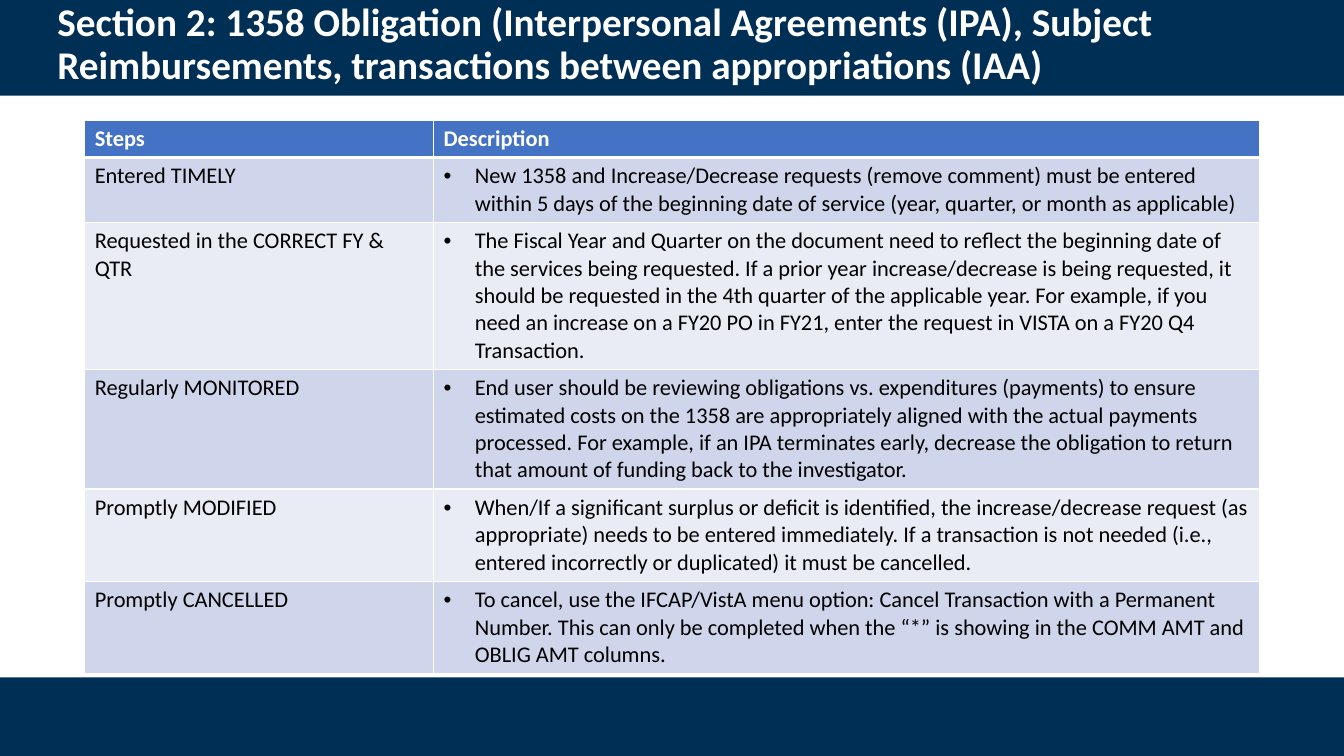
import dataclasses

import lxml.etree
import pptx
import pptx.dml.color
import pptx.enum.shapes
import pptx.enum.text
import pptx.oxml.ns
import pptx.util

PX = 9144  # EMU per px, 100 px to the inch
WIDE, HIGH = 1333, 750
FONT = "Calibri"
NAVY, BLUE, WHITE, BLACK = "002F56", "4472C4", "FFFFFF", "000000"
TINTS = ("CFD5EA", "E9EBF5")
LINE, PAD, INDENT = 27, 10, 31  # row text line, row padding, bullet indent
COLS = (346, 819)


@dataclasses.dataclass
class Band:
    top: int
    high: int


@dataclasses.dataclass
class Step:
    name: str
    text: str
    lines: int


BANDS = (Band(0, 95), Band(672, 78))
TITLE = ("Section 2: 1358 Obligation (Interpersonal Agreements (IPA), Subject "
         "Reimbursements, transactions between appropriations (IAA)")
HEAD = Step("Steps", "Description", 1)
STEPS = (
    Step("Entered TIMELY",
         "New 1358 and Increase/Decrease requests (remove comment) must be "
         "entered within 5 days of the beginning date of service (year, "
         "quarter, or month as applicable)", 2),
    Step("Requested in the CORRECT FY & QTR",
         "The Fiscal Year and Quarter on the document need to reflect the "
         "beginning date of the services being requested. If a prior year "
         "increase/decrease is being requested, it should be requested in "
         "the 4th quarter of the applicable year. For example, if you need "
         "an increase on a FY20 PO in FY21, enter the request in VISTA on a "
         "FY20 Q4 Transaction.", 5),
    Step("Regularly MONITORED",
         "End user should be reviewing obligations vs. expenditures "
         "(payments) to ensure estimated costs on the 1358 are appropriately "
         "aligned with the actual payments processed. For example, if an IPA "
         "terminates early, decrease the obligation to return that amount of "
         "funding back to the investigator.", 4),
    Step("Promptly MODIFIED",
         "When/If a significant surplus or deficit is identified, the "
         "increase/decrease request (as appropriate) needs to be entered "
         "immediately. If a transaction is not needed (i.e., entered "
         "incorrectly or duplicated) it must be cancelled.", 3),
    Step("Promptly CANCELLED",
         "To cancel, use the IFCAP/VistA menu option: Cancel Transaction "
         "with a Permanent Number. This can only be completed when the “*” "
         "is showing in the COMM AMT and OBLIG AMT columns.", 3),
)


def px(size: int) -> pptx.util.Emu:
    return pptx.util.Emu(size * PX)


def tint(fill, color: str) -> None:
    fill.solid()
    fill.fore_color.rgb = pptx.dml.color.RGBColor.from_string(color)


def write(para, text: str, size: int, color: str, bold: bool) -> None:
    run = para.add_run()
    run.text = text
    run.font.name = FONT
    run.font.size = pptx.util.Pt(size)
    run.font.bold = bold
    run.font.color.rgb = pptx.dml.color.RGBColor.from_string(color)


def child(node, tag: str, **attrs: str):
    return lxml.etree.SubElement(node, pptx.oxml.ns.qn(tag), **attrs)


def bullet(para) -> None:
    props = para._p.get_or_add_pPr()
    props.set("marL", str(px(INDENT)))
    props.set("indent", str(-px(INDENT)))
    child(props, "a:buFont", typeface="Arial")
    child(props, "a:buChar", char="•")


def border(cell, row: int) -> None:
    """White 1 pt lines, with 3 pt below the heading row."""
    thick = {("a:lnB", 0), ("a:lnT", 1)}
    props = cell._tc.get_or_add_tcPr()
    for tag in ("a:lnL", "a:lnR", "a:lnT", "a:lnB"):
        width = pptx.util.Pt(3 if (tag, row) in thick else 1)
        line = child(props, tag, w=str(width))
        child(child(line, "a:solidFill"), "a:srgbClr", val=WHITE)


def draw_title(slide) -> None:
    title = slide.shapes.title
    title.left, title.top = px(47), px(0)
    title.width, title.height = px(1270), px(90)
    frame = title.text_frame
    frame.word_wrap = True
    frame.auto_size = pptx.enum.text.MSO_AUTO_SIZE.NONE
    frame.vertical_anchor = pptx.enum.text.MSO_ANCHOR.MIDDLE
    para = frame.paragraphs[0]
    para.alignment = pptx.enum.text.PP_ALIGN.LEFT
    para.line_spacing = 0.9
    write(para, TITLE, 28, WHITE, True)


def draw_band(slide, band: Band) -> None:
    """Draw a full-width bar behind the title."""
    bar = slide.shapes.add_shape(
        pptx.enum.shapes.MSO_SHAPE.RECTANGLE,
        px(0), px(band.top), px(WIDE), px(band.high))
    bar.shadow.inherit = False
    tint(bar.fill, NAVY)
    bar.line.fill.background()
    slide.shapes.title.element.addprevious(bar.element)


def draw_table(slide) -> None:
    rows = (HEAD, *STEPS)
    highs = [LINE * step.lines + PAD for step in rows]
    table = slide.shapes.add_table(
        len(rows), len(COLS), px(84), px(119),
        px(sum(COLS)), px(sum(highs))).table
    for col, wide in zip(table.columns, COLS):
        col.width = px(wide)
    for row, step in enumerate(rows):
        table.rows[row].height = px(highs[row])
        head = row == 0
        fill = BLUE if head else TINTS[(row - 1) % 2]
        for col, text in enumerate((step.name, step.text)):
            cell = table.cell(row, col)
            border(cell, row)
            tint(cell.fill, fill)
            para = cell.text_frame.paragraphs[0]
            if col and not head:
                bullet(para)
            write(para, text, 16, WHITE if head else BLACK, head)


def main() -> None:
    deck = pptx.Presentation()
    deck.slide_width, deck.slide_height = px(WIDE), px(HIGH)
    slide = deck.slides.add_slide(deck.slide_layouts.get_by_name("Title Only"))
    tint(slide.background.fill, WHITE)
    for band in BANDS:
        draw_band(slide, band)
    draw_title(slide)
    draw_table(slide)
    deck.save("out.pptx")


if __name__ == "__main__":
    main()
